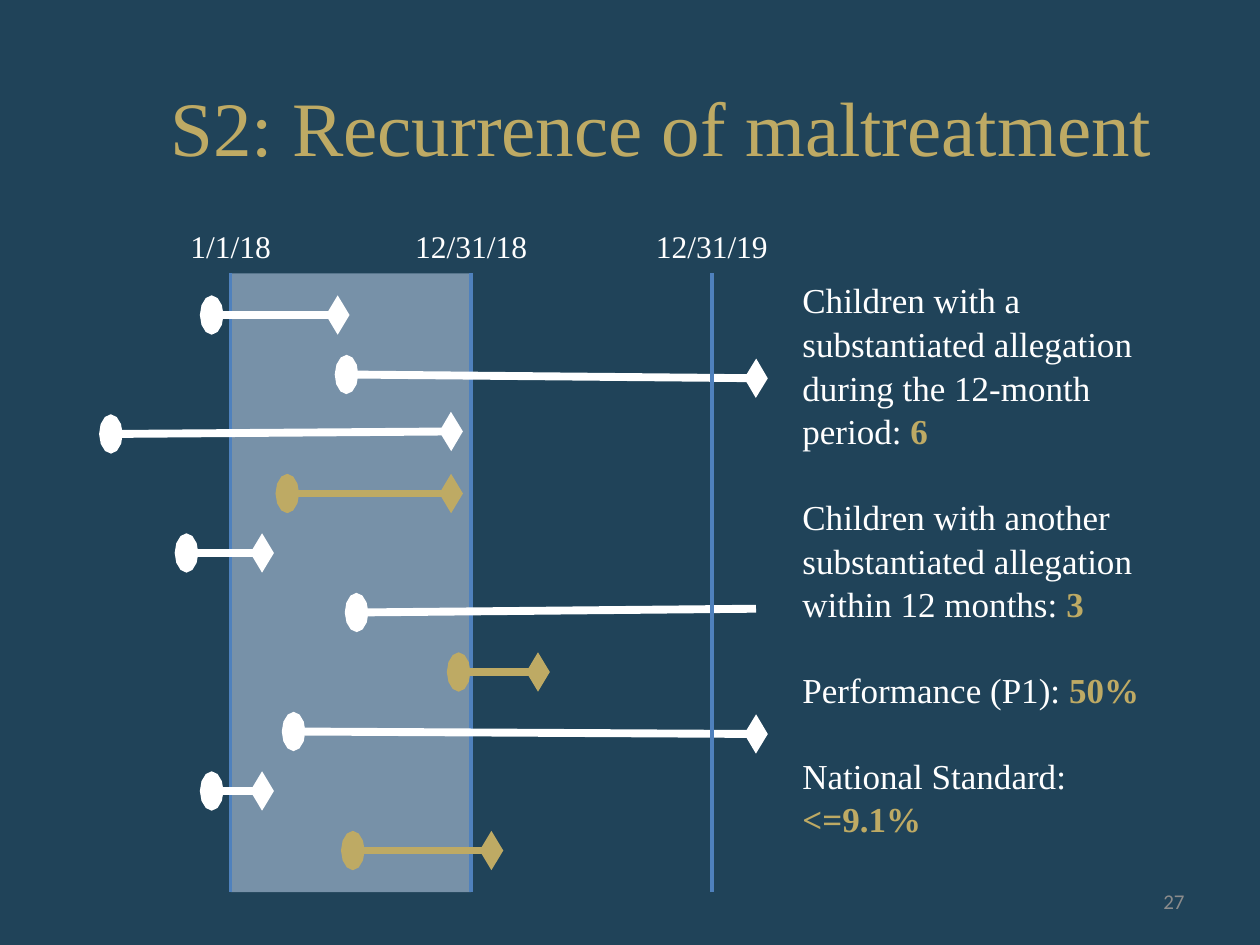
from pptx import Presentation
from pptx import util as u
from pptx.dml.color import RGBColor
from pptx.enum import shapes, text
from pptx.oxml.ns import qn
from lxml import etree

THEME = {
    "background": "204359", "gold": "BEAA64", "white": "FFFFFF",
    "boundary": "4F81BD", "band": "B9CDE5", "gray": "8C8C8C",
    "serif": "Times New Roman", "sans": "Calibri",
    "title": 44, "body": 20, "date": 18, "number": 12,
    "boundary_width": 2, "episode_width": 4.5,
}

TITLE = "S2: Recurrence of maltreatment"
START, END, FOLLOW_UP = ("1/1/18", 1.83, 0.85), ("12/31/18", 3.74, 1.1), ("12/31/19", 5.65, 1.1)
EPISODES = [
    (1.68, 2.68, 0, "white", True),
    (2.75, 6, 0.03, "white", True),
    (0.88, 3.58, -0.02, "white", True),
    (2.28, 3.58, 0, "gold", True),
    (1.48, 2.08, 0, "white", True),
    (2.83, 6, -0.03, "white", False),
    (3.64, 4.27, 0, "gold", True),
    (2.33, 6, 0.02, "white", True),
    (1.68, 2.08, 0, "white", True),
    (2.8, 3.9, 0, "gold", True),
]
RESULTS = [
    ("Children with a substantiated allegation during the 12-month period: ", "6"),
    ("Children with another substantiated allegation within 12 months: ", "3"),
    ("Performance (P1): ", "50%"),
    ("National Standard: ", "<=9.1%"),
]
PAGE = "27"
TOP, BOTTOM = 2.17, 7.08
FIRST_ROW, LAST_ROW = 2.5, 6.75


def color(name):
    return RGBColor.from_string(THEME[name])


def add_run(paragraph, words, size, shade, font="serif", bold=False):
    run = paragraph.add_run()
    run.text = words
    run.font.size = u.Pt(THEME[size])
    run.font.name = THEME[font]
    run.font.color.rgb = color(shade)
    run.font.bold = bold


def add_box(slide, left, top, width, height, wrap=True):
    frame = slide.shapes.add_textbox(*map(u.Inches, (left, top, width, height))).text_frame
    frame.word_wrap = wrap
    return frame


def add_line(slide, x1, y1, x2, y2, shade, width, **ends):
    line = slide.shapes.add_connector(
        shapes.MSO_CONNECTOR.STRAIGHT, *map(u.Inches, (x1, y1, x2, y2)))
    line.line.color.rgb = color(shade)
    line.line.width = u.Pt(THEME[width])
    outline = line.line._get_or_add_ln()
    for tag, kind in ends.items():
        etree.SubElement(outline, qn(f"a:{tag}"), type=kind, w="lg", len="med")
    etree.SubElement(line._element.spPr, qn("a:effectLst"))


def add_title(slide):
    title = slide.shapes.title
    title.left, title.top, title.width, title.height = map(u.Inches, (0, 0.3, 10, 1.25))
    title.text_frame.vertical_anchor = text.MSO_ANCHOR.MIDDLE
    paragraph = title.text_frame.paragraphs[0]
    paragraph.alignment = text.PP_ALIGN.CENTER
    paragraph.line_spacing = 1.2
    paragraph._p.get_or_add_pPr().set("marL", str(u.Inches(0.5)))
    add_run(paragraph, TITLE, "title", "gold")


def add_band(slide):
    left, right = START[1], END[1]
    band = slide.shapes.add_shape(
        shapes.MSO_SHAPE.RECTANGLE, *map(u.Inches, (left, TOP, right - left, BOTTOM - TOP)))
    band.shadow.inherit = False
    band.line.fill.background()
    band.fill.solid()
    band.fill.fore_color.rgb = color("band")
    fill = band._element.spPr.find(qn("a:solidFill"))
    etree.SubElement(fill[0], qn("a:alpha"), val="57000")


def add_boundary(slide, date, x, width):
    add_line(slide, x, TOP, x, BOTTOM, "boundary", "boundary_width")
    frame = add_box(slide, x - width / 2, 1.75, width, 0.4, wrap=False)
    paragraph = frame.paragraphs[0]
    paragraph.alignment = text.PP_ALIGN.CENTER
    add_run(paragraph, date, "date", "white")


def add_episodes(slide):
    gap = (LAST_ROW - FIRST_ROW) / (len(EPISODES) - 1)
    for row, (start, end, rise, shade, closed) in enumerate(EPISODES):
        y = FIRST_ROW + row * gap
        ends = {"headEnd": "oval"}
        if closed:
            ends["tailEnd"] = "diamond"
        add_line(slide, start, y, end, y + rise, shade, "episode_width", **ends)


def add_results(slide):
    frame = add_box(slide, 6.27, 2.15, 2.9, 4.48)
    for index, (label, value) in enumerate(RESULTS):
        paragraph = frame.add_paragraph() if index else frame.paragraphs[0]
        paragraph.line_spacing = 1.04
        paragraph.space_before = u.Pt(24 if index else 0)
        add_run(paragraph, label, "body", "white")
        add_run(paragraph, value, "body", "gold", bold=True)


def add_page_number(slide):
    frame = add_box(slide, 7.17, 6.95, 2.33, 0.4)
    frame.vertical_anchor = text.MSO_ANCHOR.MIDDLE
    paragraph = frame.paragraphs[0]
    paragraph.alignment = text.PP_ALIGN.RIGHT
    add_run(paragraph, PAGE, "number", "gray", font="sans")


def main():
    presentation = Presentation()
    presentation.slide_width, presentation.slide_height = u.Inches(10), u.Inches(7.5)
    slide = presentation.slides.add_slide(presentation.slide_layouts[5])
    slide.background.fill.solid()
    slide.background.fill.fore_color.rgb = color("background")
    add_title(slide)
    add_band(slide)
    add_boundary(slide, *START)
    add_boundary(slide, *END)
    add_episodes(slide)
    add_boundary(slide, *FOLLOW_UP)
    add_results(slide)
    add_page_number(slide)
    presentation.save("out.pptx")


if __name__ == "__main__":
    main()
